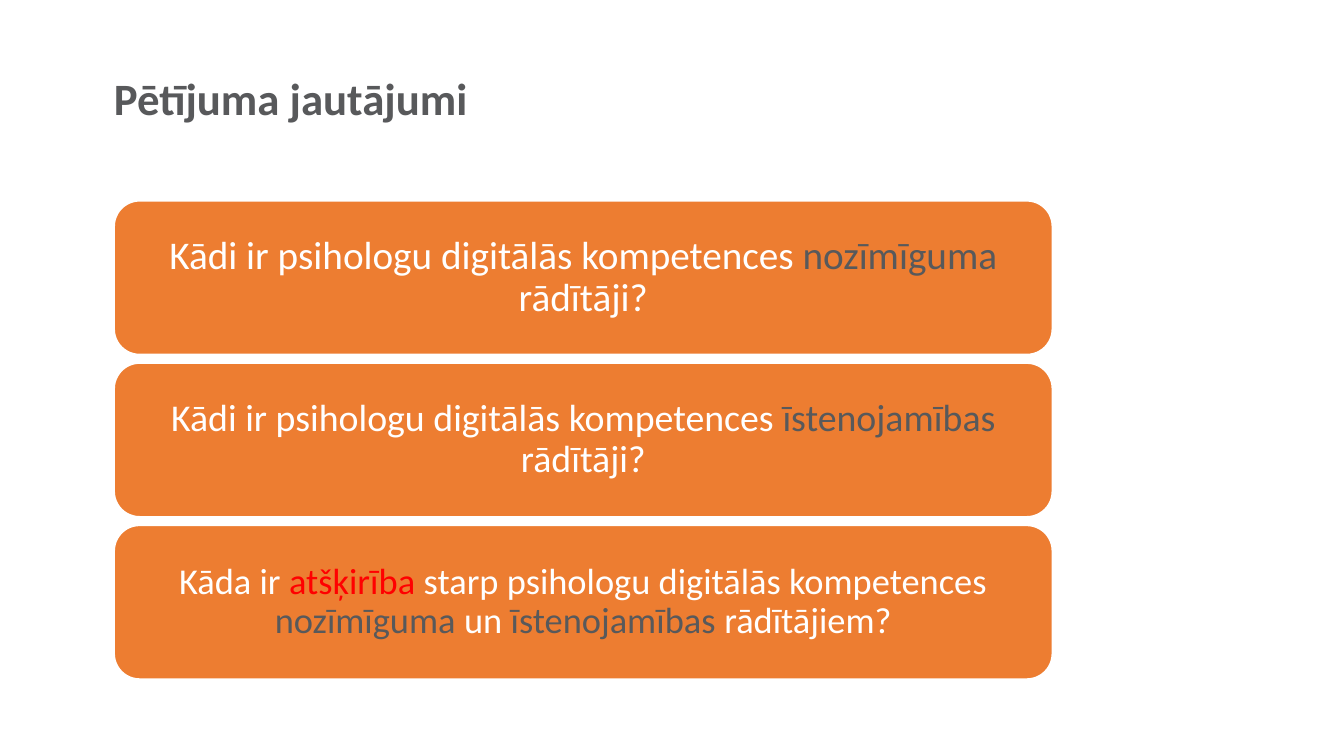
from dataclasses import dataclass

from pptx import Presentation
from pptx import util as u
from pptx.dml.color import RGBColor
from pptx.enum import shapes, text
from pptx.slide import Slide
from pptx.text.text import TextFrame

EMU_PER_PX = 9144  # 100 px to the inch


@dataclass(frozen=True)
class Theme:
    font: str = "Calibri"
    grey: str = "58595B"
    white: str = "FFFFFF"
    red: str = "FF0000"
    orange: str = "ED7D31"
    title_size: int = 32
    outline_width: float = 1.5


@dataclass(frozen=True)
class Span:
    words: str
    color: str


@dataclass(frozen=True)
class Question:
    size: int
    margin_x: int
    margin_y: int
    spans: tuple[Span, ...]


THEME = Theme()
SLIDE_WIDTH, SLIDE_HEIGHT = 1333, 750
LEFT = 113
TITLE_TOP, TITLE_WIDTH, TITLE_HEIGHT = 76, 1150, 113
CARD_TOP, CARD_WIDTH, CARD_HEIGHT, CARD_STEP = 199, 931, 153, 161

TITLE = Span("Pētījuma jautājumi", THEME.grey)
IMPORTANCE = Span("nozīmīguma", THEME.grey)
FEASIBILITY = Span("īstenojamības", THEME.grey)
OPENING = Span("Kādi ir psihologu digitālās kompetences ", THEME.white)
ENDING = Span(" rādītāji?", THEME.white)

QUESTIONS = (
    Question(28, 12, 6, (OPENING, IMPORTANCE, ENDING)),
    Question(27, 11, 6, (OPENING, FEASIBILITY, ENDING)),
    Question(26, 11, 5, (
        Span("Kāda ir ", THEME.white),
        Span("atšķirība", THEME.red),
        Span(" starp psihologu digitālās kompetences ", THEME.white),
        IMPORTANCE,
        Span(" un ", THEME.white),
        FEASIBILITY,
        Span(" rādītājiem?", THEME.white),
    )),
)


def px(length: int) -> u.Emu:
    return u.Emu(length * EMU_PER_PX)


def rgb(color: str) -> RGBColor:
    return RGBColor.from_string(color)


def write_spans(frame: TextFrame, spans: tuple[Span, ...], size: int,
                margin_x: int = 0, margin_y: int = 0, bold: bool = False,
                align: text.PP_ALIGN = text.PP_ALIGN.LEFT,
                anchor: text.MSO_ANCHOR = text.MSO_ANCHOR.TOP) -> None:
    """Fill the frame with one paragraph of coloured spans."""
    frame.word_wrap = True
    frame.vertical_anchor = anchor
    frame.margin_left = frame.margin_right = px(margin_x)
    frame.margin_top = frame.margin_bottom = px(margin_y)
    paragraph = frame.paragraphs[0]
    paragraph.alignment = align
    paragraph.line_spacing = 0.9
    paragraph.font.name = THEME.font
    paragraph.font.size = u.Pt(size)
    paragraph.font.bold = bold
    for span in spans:
        run = paragraph.add_run()
        run.text = span.words
        run.font.color.rgb = rgb(span.color)


def add_title(slide: Slide) -> None:
    box = slide.shapes.add_textbox(px(LEFT), px(TITLE_TOP), px(TITLE_WIDTH), px(TITLE_HEIGHT))
    write_spans(box.text_frame, (TITLE,), THEME.title_size, bold=True)


def add_question(slide: Slide, question: Question, top: int) -> None:
    card = slide.shapes.add_shape(shapes.MSO_SHAPE.ROUNDED_RECTANGLE,
                                  px(LEFT), px(top), px(CARD_WIDTH), px(CARD_HEIGHT))
    card.shadow.inherit = False
    card.fill.solid()
    card.fill.fore_color.rgb = rgb(THEME.orange)
    card.line.color.rgb = rgb(THEME.white)
    card.line.width = u.Pt(THEME.outline_width)
    write_spans(card.text_frame, question.spans, question.size,
                question.margin_x, question.margin_y,
                align=text.PP_ALIGN.CENTER, anchor=text.MSO_ANCHOR.MIDDLE)


def main() -> None:
    presentation = Presentation()
    presentation.slide_width = px(SLIDE_WIDTH)
    presentation.slide_height = px(SLIDE_HEIGHT)
    slide = presentation.slides.add_slide(presentation.slide_layouts[6])
    add_title(slide)
    for index, question in enumerate(QUESTIONS):
        add_question(slide, question, CARD_TOP + index * CARD_STEP)
    presentation.save("out.pptx")


if __name__ == "__main__":
    main()
